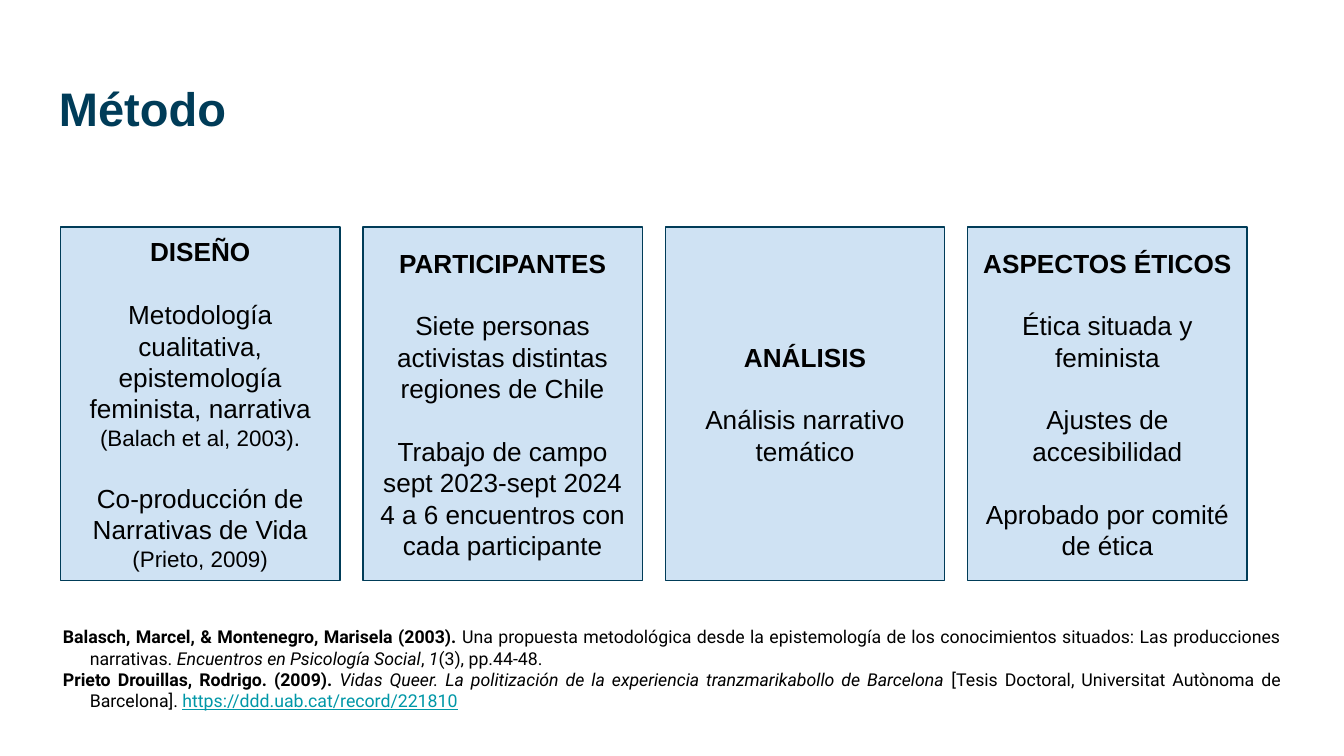
"""Build the method slide: four cards above two references."""
from dataclasses import dataclass

import pptx
import pptx.dml.color
import pptx.enum.shapes
import pptx.enum.text
import pptx.util

Inches = pptx.util.Inches
Pt = pptx.util.Pt
Align = pptx.enum.text.PP_ALIGN


@dataclass(frozen=True)
class Theme:
    navy: str = "003C58"
    pale: str = "CFE2F3"
    black: str = "000000"
    teal: str = "0097A7"
    main: str = "Arial"
    cite: str = "Roboto"
    title: float = 25.2
    body: float = 14
    small: float = 12
    note: float = 9.5
    gap: float = 16.8


THEME = Theme()


@dataclass(frozen=True)
class Span:
    text: str
    size: float
    bold: bool = False
    slant: bool = False
    line: bool = False
    color: str = THEME.black
    font: str = THEME.main


@dataclass(frozen=True)
class Para:
    spans: tuple[Span, ...]
    gap: bool = True


@dataclass(frozen=True)
class Card:
    head: str
    paras: tuple[Para, ...]


def rgb(code: str) -> pptx.dml.color.RGBColor:
    return pptx.dml.color.RGBColor.from_string(code)


def body(text: str, cite: str = "", gap: bool = True) -> Para:
    spans = [Span(text, THEME.body)]
    if cite:
        spans.append(Span(cite, THEME.small))
    return Para(tuple(spans), gap)


def note(text: str, **style) -> Span:
    return Span(text, THEME.note, font=THEME.cite, **style)


def write(frame, paras: list[Para], align: Align) -> None:
    frame.word_wrap = True
    frame.margin_left = frame.margin_right = Inches(0.1)
    frame.margin_top = frame.margin_bottom = Inches(0.1)
    for rank, para in enumerate(paras):
        item = frame.add_paragraph() if rank else frame.paragraphs[0]
        item.alignment = align
        if rank and para.gap:
            item.space_before = Pt(THEME.gap)
        for span in para.spans:
            run = item.add_run()
            run.text = span.text
            font = run.font
            font.name, font.size = span.font, Pt(span.size)
            font.bold, font.italic = span.bold, span.slant
            font.underline = span.line
            font.color.rgb = rgb(span.color)


def draw_card(slide, card: Card, left: float) -> None:
    box = slide.shapes.add_shape(
        pptx.enum.shapes.MSO_SHAPE.RECTANGLE,
        Inches(left), Inches(1.69), Inches(2.08), Inches(2.63))
    box.shadow.inherit = False
    box.fill.solid()
    box.fill.fore_color.rgb = rgb(THEME.pale)
    box.line.color.rgb = rgb(THEME.navy)
    box.line.width = Pt(0.75)
    box.text_frame.vertical_anchor = pptx.enum.text.MSO_ANCHOR.MIDDLE
    head = Para((Span(card.head, THEME.body, bold=True),))
    write(box.text_frame, [head, *card.paras], Align.CENTER)


def draw_text(slide, area: tuple[float, ...], paras: list[Para], align: Align):
    box = slide.shapes.add_textbox(*map(Inches, area))
    write(box.text_frame, paras, align)
    return box.text_frame


CARDS = (
    Card("DISEÑO", (
        body("Metodología cualitativa, epistemología feminista, narrativa ",
             "(Balach et al, 2003)."),
        body("Co-producción de Narrativas de Vida ", "(Prieto, 2009)"))),
    Card("PARTICIPANTES", (
        body("Siete personas activistas distintas regiones de Chile"),
        body("Trabajo de campo sept 2023-sept 2024"),
        body("4 a 6 encuentros con cada participante", gap=False))),
    Card("ANÁLISIS", (body("Análisis narrativo temático"),)),
    Card("ASPECTOS ÉTICOS", (
        body("Ética situada y feminista"),
        body("Ajustes de accesibilidad"),
        body("Aprobado por comité de ética"))),
)

NOTES = [
    Para((
        note("Balasch, Marcel, & Montenegro, Marisela (2003).", bold=True),
        note(" Una propuesta metodológica desde la epistemología de los "
             "conocimientos situados: Las producciones narrativas. "),
        note("Encuentros en Psicología Social", slant=True),
        note(", "),
        note("1", slant=True),
        note("(3), pp.44-48."))),
    Para((
        note("Prieto Drouillas, Rodrigo. (2009). ", bold=True),
        note("Vidas Queer. La politización de la experiencia "
             "tranzmarikabollo de Barcelona", slant=True),
        note(" [Tesis Doctoral, Universitat Autònoma de Barcelona]. "),
        note("https://ddd.uab.cat/record/221810", line=True,
             color=THEME.teal)), gap=False),
]


def main() -> None:
    deck = pptx.Presentation()
    deck.slide_width = Inches(10)
    deck.slide_height = Inches(10 * 9 / 16)
    slide = deck.slides.add_slide(deck.slide_layouts[6])
    title = Span("Método", THEME.title, bold=True, color=THEME.navy)
    draw_text(slide, (0.34, 0.49, 9.32, 0.63), [Para((title,))], Align.LEFT)
    for rank, card in enumerate(CARDS):
        draw_card(slide, card, 0.45 + 2.25 * rank)
    frame = draw_text(slide, (0.37, 4.56, 9.26, 1.14), NOTES, Align.JUSTIFY)
    for item in frame.paragraphs:
        props = item._p.get_or_add_pPr()
        props.set("marL", str(Inches(0.2)))
        props.set("indent", str(Inches(-0.2)))
    deck.save("out.pptx")


if __name__ == "__main__":
    main()
